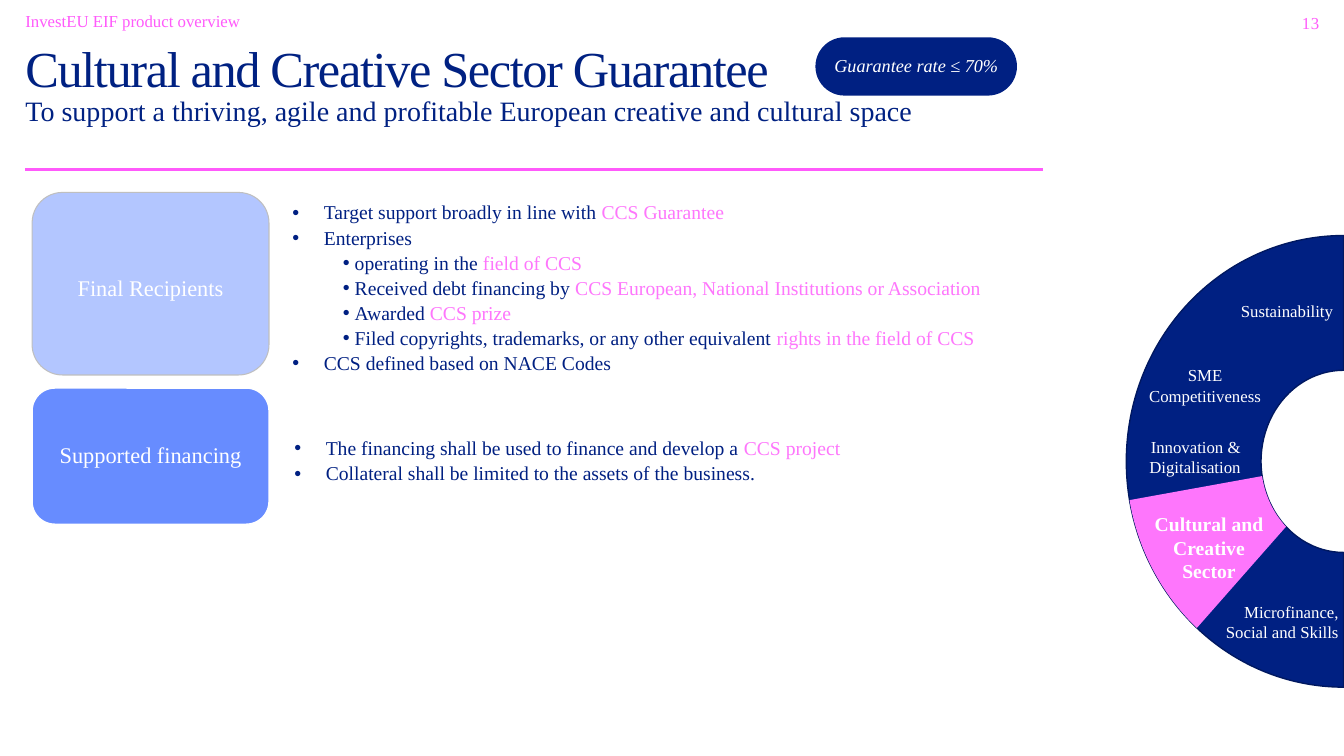
from lxml import etree
from pptx import Presentation
from pptx.dml.color import RGBColor
from pptx.enum.shapes import MSO_CONNECTOR, MSO_SHAPE
from pptx.enum.text import MSO_ANCHOR, MSO_AUTO_SIZE, PP_ALIGN
from pptx.oxml.ns import qn
from pptx.util import Cm, Pt

LEFT, MID, RIGHT = PP_ALIGN.LEFT, PP_ALIGN.CENTER, PP_ALIGN.RIGHT
TOP, CENTER = MSO_ANCHOR.TOP, MSO_ANCHOR.MIDDLE
NONE = MSO_AUTO_SIZE.NONE
ROUND, ARC = MSO_SHAPE.ROUNDED_RECTANGLE, MSO_SHAPE.BLOCK_ARC
LINE = MSO_CONNECTOR.STRAIGHT
FACE = "Times New Roman"
NAVY, PINK, WHITE, ROSE = "002082", "FE76FC", "FFFFFF", "FF5AFB"
INDENTS = [(0.79, -0.79), (1.57, -0.3)]


def color(code):
    return RGBColor.from_string(code)


def apply(target, values):
    for name, value in values.items():
        setattr(target, name, value)


class Deck:
    """Holds the text style and the slide being drawn."""

    def __init__(self, page):
        self.page = page
        self.shapes = page.shapes

    def place(self, shape, box):
        names = ("left", "top", "width", "height")
        apply(shape, dict(zip(names, map(Cm, box))))

    def frame(self, shape, pad, anchor):
        frame = shape.text_frame
        names = ("margin_left", "margin_top", "margin_right", "margin_bottom")
        apply(frame, dict(zip(names, map(Cm, pad))))
        apply(frame, {"word_wrap": True, "auto_size": NONE,
                      "vertical_anchor": anchor})
        return frame

    def fill_para(self, para, text, size, tint, align=LEFT, space=1.0, after=0,
                  gap=0, **font):
        apply(para, {"alignment": align, "line_spacing": space,
                     "space_before": Pt(0), "space_after": Pt(after)})
        for index, part in enumerate(text.split("|")):
            run = para.add_run()
            run.text = part
            style = {"name": FACE, "size": Pt(size), "bold": False}
            apply(run.font, {**style, **font})
            run.font.color.rgb = color(PINK if index % 2 else tint)
            if gap:
                run._r.get_or_add_rPr().set("spc", str(gap))

    def holder(self, key, box, text, size, tint, space=0.9, gap=0):
        shape = self.page.placeholders[key]
        self.place(shape, box)
        frame = self.frame(shape, (0, 0, 0, 0), TOP)
        self.fill_para(frame.paragraphs[0], text, size, tint, space=space,
                       gap=gap)

    def bullets(self, key, box, items):
        shape = self.page.placeholders[key]
        self.place(shape, box)
        frame = self.frame(shape, (0.69, 0.36, 0.69, 0.36), CENTER)
        for index, (level, text) in enumerate(items):
            para = frame.add_paragraph() if index else frame.paragraphs[0]
            para.level = level
            props = para._p.get_or_add_pPr()
            for name, value in zip(("marL", "indent"), INDENTS[level]):
                props.set(name, str(Cm(value)))
            etree.SubElement(props, qn("a:buFont")).set("typeface", "Arial")
            etree.SubElement(props, qn("a:buChar")).set("char", "•")
            self.fill_para(para, text, 14, NAVY, space=0.9, after=2.8)

    def label(self, box, text, size, tint, align, pad=(0.25, 0.13, 0.25, 0.13),
              **font):
        shape = self.shapes.add_textbox(*map(Cm, box))
        frame = self.frame(shape, pad, TOP)
        self.fill_para(frame.paragraphs[0], text, size, tint, align, **font)

    def shape(self, kind, box, fill, edge=None, width=1, adjust=(), turn=0):
        shape = self.shapes.add_shape(kind, *map(Cm, box))
        shape.shadow.inherit = False
        shape.rotation = turn
        for index, value in enumerate(adjust):
            shape.adjustments[index] = value
        shape.fill.solid()
        shape.fill.fore_color.rgb = color(fill)
        if edge:
            shape.line.color.rgb = color(edge)
            shape.line.width = Pt(width)
        else:
            shape.line.fill.background()
        return shape

    def card(self, box, fill, text, size, pad, edge=None, width=1, adjust=(),
             **font):
        shape = self.shape(ROUND, box, fill, edge, width, adjust)
        frame = self.frame(shape, pad, CENTER)
        self.fill_para(frame.paragraphs[0], text, size, WHITE, MID, 0.9, **font)

    def rule(self, start, end, tint, width):
        line = self.shapes.add_connector(LINE, *map(Cm, start + end))
        line.line.color.rgb = color(tint)
        line.line.width = Pt(width)
        etree.SubElement(line._element.spPr, qn("a:effectLst"))


def main():
    show = Presentation()
    show.slide_width, show.slide_height = Cm(33.87), Cm(19.05)
    deck = Deck(show.slides.add_slide(show.slide_layouts[4]))

    deck.holder(0, (0.64, 1.22, 26.92, 1.93),
                "Cultural and Creative Sector Guarantee", 36, "002182", 0.8, -100)
    deck.holder(1, (0.64, 2.44, 31.29, 0.99),
                "To support a thriving, agile and profitable European "
                "creative and cultural space", 20, "002182")
    deck.holder(3, (0.64, 0.33, 19.3, 0.56),
                "InvestEU EIF product overview", 12, ROSE)
    deck.label((32.08, 0.28, 1.17, 0.56), "13", 12, ROSE, RIGHT,
               pad=(0, 0.03, 0, 0), gap=50)
    deck.card((20.55, 0.94, 5.08, 1.47), NAVY, "Guarantee rate ≤ 70%", 13,
              (0, 0.13, 0, 0.13), adjust=[0.5], italic=True)
    deck.rule((0.64, 4.27), (26.29, 4.27), ROSE, 1.75)

    deck.card((0.81, 4.85, 5.97, 4.6), "B3C6FF", "Final Recipients", 16,
              (0.2, 0.4, 0.2, 0.1), "BFBFBF", 0.75)
    deck.bullets(2, (6.68, 5.26, 19.61, 4.04), [
        (0, "Target support broadly in line with |CCS Guarantee"),
        (0, "Enterprises"),
        (1, "operating in the |field of CCS"),
        (1, "Received debt financing by "
            "|CCS European, National Institutions or Association"),
        (1, "Awarded |CCS prize"),
        (1, "Filed copyrights, trademarks, or any other equivalent "
            "|rights in the field of CCS"),
        (0, "CCS defined based on NACE Codes"),
    ])
    deck.card((0.81, 9.78, 5.97, 3.43), "678CFF", "Supported financing", 16,
              (0.2, 0.1, 0.2, 0.1), WHITE)
    deck.bullets(4, (6.73, 9.75, 19.35, 3.78), [
        (0, "The financing shall be used to finance and develop a |CCS project"),
        (0, "Collateral shall be limited to the assets of the business."),
    ])

    wheel = (28.17, 6.15, 11.38, 10.95)
    deck.shape(ARC, wheel, NAVY, "001860", 1, (108, 0, 0.31), 270)
    deck.shape(ARC, wheel, PINK, adjust=(132.82, 155.84, 0.31), turn=270)
    deck.label((28.63, 12.78, 3.68, 2.06), "Cultural and Creative Sector",
               14, WHITE, MID, bold=True)
    for box, text, align in [
        ((30.45, 7.44, 3.4, 0.76), "Sustainability", RIGHT),
        ((28.45, 9.07, 3.84, 1.27), "SME Competitiveness", MID),
        ((28.04, 10.87, 3.48, 1.27), "Innovation & Digitalisation", RIGHT),
        ((30.38, 15.04, 3.61, 1.27), "Microfinance, Social and Skills", RIGHT),
    ]:
        deck.label(box, text, 12, WHITE, align)

    show.save("out.pptx")


if __name__ == "__main__":
    main()
